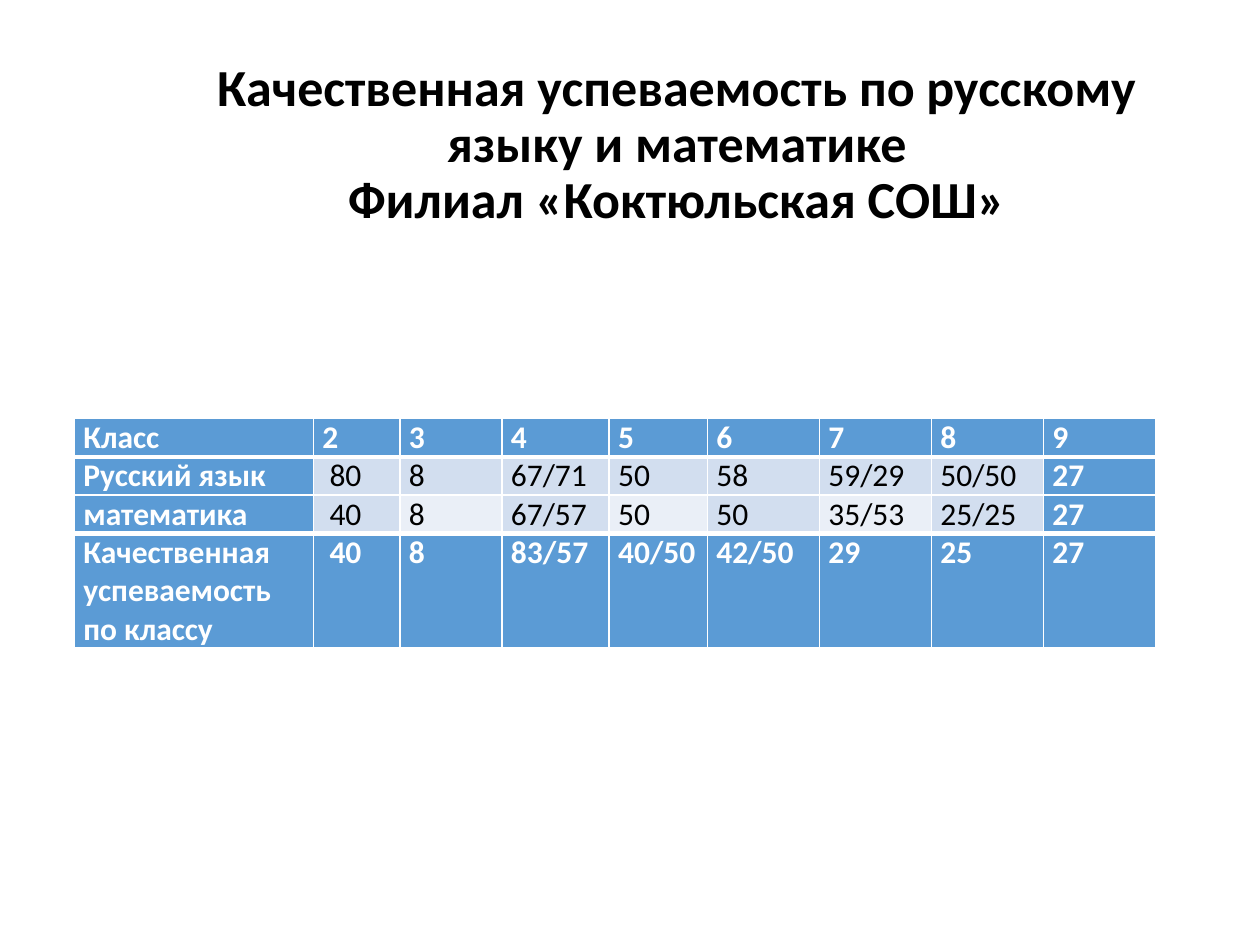
from lxml import etree
from pptx import Presentation
from pptx.dml.color import RGBColor
from pptx.enum.text import MSO_ANCHOR, PP_ALIGN
from pptx.oxml.ns import qn
from pptx.util import Cm, Pt

CENTER = PP_ALIGN.CENTER
MIDDLE = MSO_ANCHOR.MIDDLE
FONT = "Calibri"
BLACK, WHITE, BLUE = "000000", "FFFFFF", "5B9BD5"
BANDS = ("EAEFF7", "D2DEEF")
TITLE = (
    "Качественная успеваемость по русскому языку и математике",
    "Филиал «Коктюльская СОШ»",
)
ROWS = (
    ("Класс", "2", "3", "4", "5", "6", "7", "8", "9"),
    ("Русский язык", " 80", "8", "67/71", "50", "58", "59/29", "50/50", "27"),
    ("математика", " 40", "8", "67/57", "50", "50", "35/53", "25/25", "27"),
    ("Качественная успеваемость по классу", " 40", "8", "83/57", "40/50",
     "42/50", "29", "25", "27"),
)
WIDTHS = (4.82, 1.74, 2.06, 2.16, 1.98) + (2.26,) * 4
LINE = 0.77


def color(code):
    """Turn a hex string into a colour."""
    return RGBColor.from_string(code)


def add_run(para, text, size, code, bold):
    """Add one styled run to a paragraph."""
    run = para.add_run()
    run.text = text
    font = run.font
    font.name, font.size, font.bold = FONT, Pt(size), bold
    font.color.rgb = color(code)


def add_edge(cell, side, width):
    """Draw one white border of a cell."""
    props = cell._tc.get_or_add_tcPr()
    edge = etree.SubElement(props, qn(f"a:ln{side}"), w=str(Pt(width)))
    fill = etree.SubElement(edge, qn("a:solidFill"))
    etree.SubElement(fill, qn("a:srgbClr"), val=WHITE)


def add_title(slide, left, top, width, height):
    """Place the centred heading in its box."""
    box = slide.shapes.add_textbox(Cm(left), Cm(top), Cm(width), Cm(height))
    frame = box.text_frame
    frame.word_wrap = True
    frame.vertical_anchor = MIDDLE
    para = frame.paragraphs[0]
    para.alignment = CENTER
    para.line_spacing = 0.9
    for index, text in enumerate(TITLE):
        if index:
            para.add_line_break()
        add_run(para, text, 29.7, BLACK, True)


def fill_cell(cell, text, row, col):
    """Style and fill one cell by its place in the grid."""
    last = len(ROWS) - 1
    edge = row in (0, last) or col in (0, len(WIDTHS) - 1)
    band = BANDS[1] if row == 1 else BANDS[col % 2]
    cell.margin_left = cell.margin_right = Cm(0.18)
    cell.margin_top = cell.margin_bottom = 0
    widths = {
        "L": 1,
        "R": 1,
        "T": 3 if row in (1, last) else 1,
        "B": 3 if row in (0, last - 1) else 1,
    }
    for side, width in widths.items():
        add_edge(cell, side, width)
    cell.fill.solid()
    cell.fill.fore_color.rgb = color(BLUE if edge else band)
    para = cell.text_frame.paragraphs[0]
    add_run(para, text, 18, WHITE if edge else BLACK, edge)


def add_grades(slide, left, top):
    """Place the table of results by class."""
    lines = (1, 1, 1, 3)
    frame = slide.shapes.add_table(
        len(ROWS), len(WIDTHS), Cm(left), Cm(top),
        Cm(sum(WIDTHS)), Cm(LINE * sum(lines)))
    table = frame.table
    for col, width in zip(table.columns, WIDTHS):
        col.width = Cm(width)
    for row, count in zip(table.rows, lines):
        row.height = Cm(LINE * count)
    for row, texts in enumerate(ROWS):
        for col, text in enumerate(texts):
            fill_cell(table.cell(row, col), text, row, col)


def main():
    """Build the slide and save it."""
    deck = Presentation()
    deck.slide_width, deck.slide_height = Cm(25.4), Cm(19.05)
    slide = deck.slides.add_slide(deck.slide_layouts[6])
    add_title(slide, 2.7, 1.1, 21.9, 3.68)
    add_grades(slide, 1.5, 8.44)
    deck.save("out.pptx")


if __name__ == "__main__":
    main()
